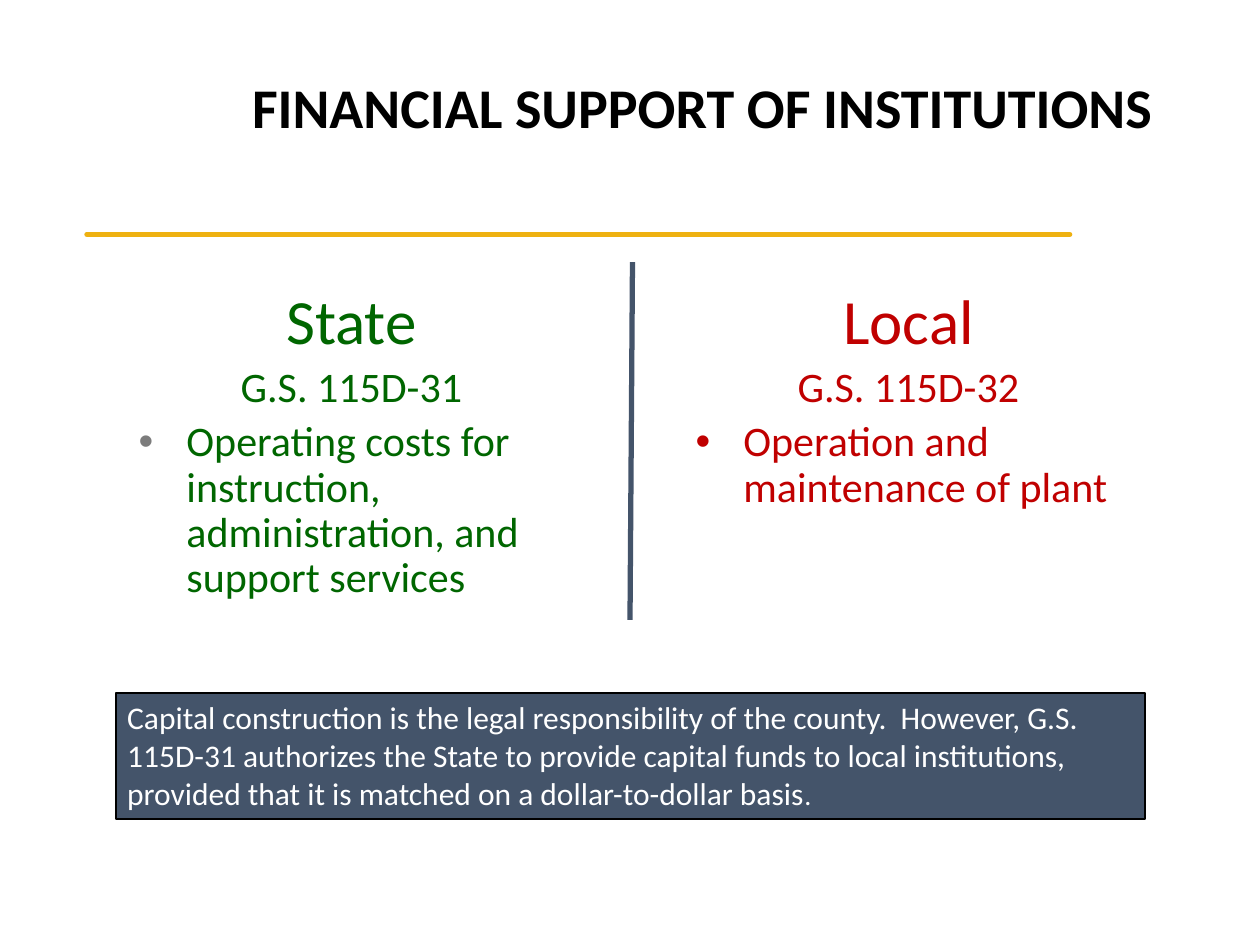
from lxml.etree import SubElement
from pptx import Presentation
from pptx.dml.color import RGBColor
from pptx.enum.shapes import MSO_CONNECTOR, MSO_SHAPE
from pptx.enum.text import MSO_ANCHOR, MSO_AUTO_SIZE, PP_ALIGN
from pptx.oxml.ns import qn
from pptx.util import Inches, Pt

# Content
TITLE = "FINANCIAL SUPPORT OF INSTITUTIONS"
COLUMNS = [
    # left, height, text colour, bullet colour, heading, statute, bullet
    (1, 2.8, "006600", "7C7C7C", "State", "G.S. 115D-31",
     "Operating costs for instruction, administration, and support services"),
    (5.42, 1.98, "C00000", "C00000", "Local", "G.S. 115D-32",
     "Operation and maintenance of plant"),
]
NOTE = ("Capital construction is the legal responsibility of the county.  "
        "However, G.S. 115D-31 authorizes the State to provide capital funds "
        "to local institutions, provided that it is matched on a "
        "dollar-to-dollar basis")
LINES = [
    # from, to, colour, cap
    ((0.69, 1.86), (8.49, 1.86), "EEB111", "rnd"),
    ((5.02, 2.08), (5, 4.92), "44546A", "flat"),
]


def color(code):
    return RGBColor.from_string(code)


def place(shape, left, top, width, height):
    shape.left, shape.top = Inches(left), Inches(top)
    shape.width, shape.height = Inches(width), Inches(height)


def style(font, size, code, bold=False):
    font.name, font.size, font.bold = "Calibri", Pt(size), bold
    font.color.rgb = color(code)


def bullet(para, code=None):
    """Hang the paragraph; draw a bullet only when a colour is given."""
    props = para._p.get_or_add_pPr()
    props.set("marL", str(Inches(0.38)))
    props.set("indent", str(-Inches(0.38)))
    if code:
        tint = SubElement(props, qn("a:buClr"))
        SubElement(tint, qn("a:srgbClr"), val=code)
        SubElement(props, qn("a:buFont"), typeface="Arial")
        SubElement(props, qn("a:buChar"), char="•")
    else:
        SubElement(props, qn("a:buNone"))


deck = Presentation()
deck.slide_width, deck.slide_height = Inches(10), Inches(7.5)
slide = deck.slides.add_slide(deck.slide_layouts[3])
title, *bodies = slide.placeholders

# Title
place(title, 1.9, 0.36, 7.64, 1.03)
frame = title.text_frame
frame.text = TITLE
frame.auto_size = MSO_AUTO_SIZE.NONE
frame.vertical_anchor = MSO_ANCHOR.MIDDLE
para = frame.paragraphs[0]
para.alignment, para.line_spacing = PP_ALIGN.LEFT, 0.9
style(para.font, 32, "000000", True)

# Two columns
for body, (left, high, code, dot, *texts) in zip(bodies, COLUMNS):
    place(body, left, 2.25, 3.58, high)
    frame = body.text_frame
    frame.text = "\n".join(texts)
    frame.auto_size = MSO_AUTO_SIZE.NONE
    rows = zip(frame.paragraphs, (36, 24, 24), (None, None, dot))
    for i, (para, size, mark) in enumerate(rows):
        bullet(para, mark)
        para.alignment = PP_ALIGN.LEFT if mark else PP_ALIGN.CENTER
        para.line_spacing = 0.9
        para.space_before = Pt(5 if i else 0)
        style(para.font, size, code)

# Rule and divider
for start, end, code, cap in LINES:
    line = slide.shapes.add_connector(
        MSO_CONNECTOR.STRAIGHT, *map(Inches, start + end))
    line.line.color.rgb = color(code)
    line.line.width = Pt(3)
    line.line._get_or_add_ln().set("cap", cap)
    SubElement(line._element.spPr, qn("a:effectLst"))

# Note on capital construction
box = slide.shapes.add_shape(
    MSO_SHAPE.RECTANGLE, *map(Inches, (0.92, 5.5, 8.17, 1)))
box.shadow.inherit = False
box.fill.solid()
box.fill.fore_color.rgb = color("44546A")
box.line.color.rgb = color("000000")
box.line.width = Pt(1)
frame = box.text_frame
frame.word_wrap = True
frame.auto_size = MSO_AUTO_SIZE.SHAPE_TO_FIT_TEXT
frame.vertical_anchor = MSO_ANCHOR.TOP
frame.margin_left = frame.margin_right = Inches(0.09)
frame.margin_top = frame.margin_bottom = Inches(0.04)
para = frame.paragraphs[0]
para.alignment = PP_ALIGN.LEFT
for text, size in ((NOTE, 18), (".", 16)):
    run = para.add_run()
    run.text = text
    style(run.font, size, "FFFFFF")

deck.save("out.pptx")
